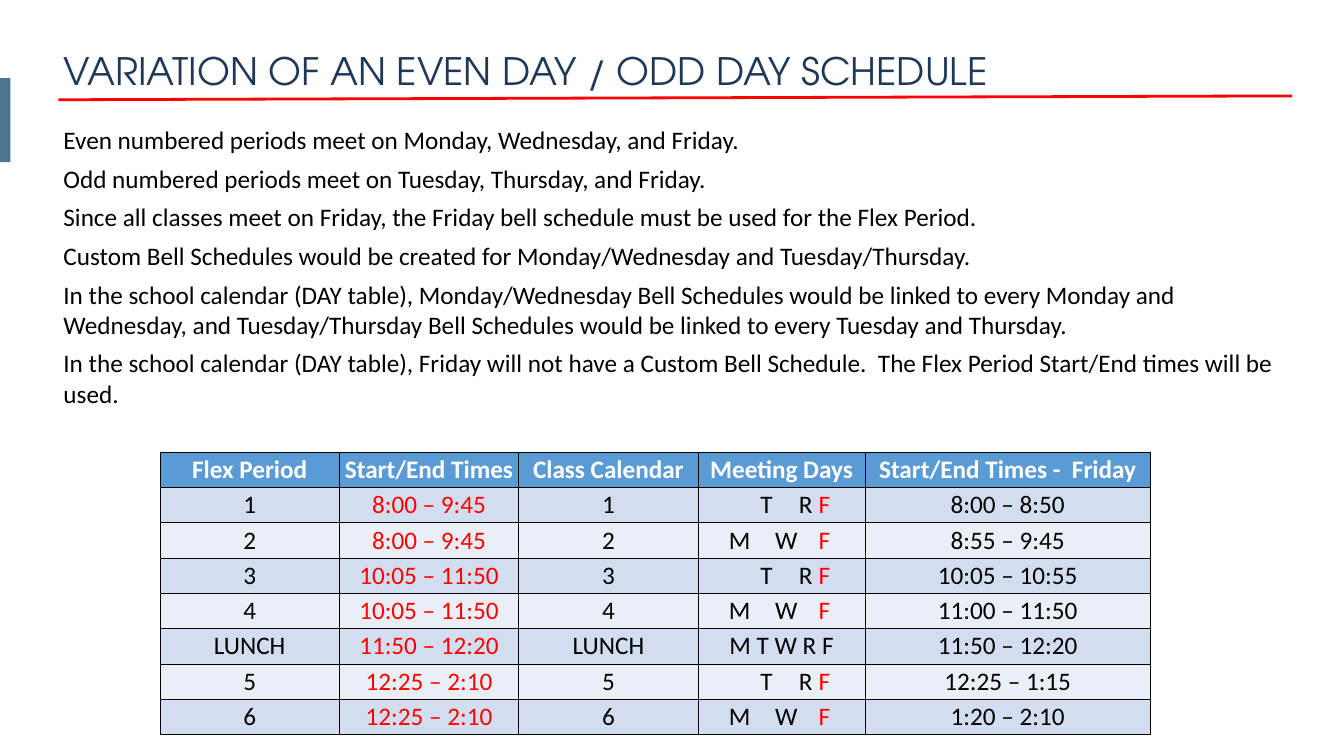
from lxml import etree
from pptx import Presentation
from pptx.dml.color import RGBColor
from pptx.enum.shapes import MSO_CONNECTOR, MSO_SHAPE
from pptx.enum.text import MSO_ANCHOR, PP_ALIGN
from pptx.oxml.ns import qn
from pptx.util import Pt

STRAIGHT = MSO_CONNECTOR.STRAIGHT
RECTANGLE = MSO_SHAPE.RECTANGLE
MIDDLE = MSO_ANCHOR.MIDDLE
LEFT, CENTER = PP_ALIGN.LEFT, PP_ALIGN.CENTER

TITLE = "VARIATION OF AN EVEN DAY / ODD DAY SCHEDULE"
RULES = [
    "Even numbered periods meet on Monday, Wednesday, and Friday.",
    "Odd numbered periods meet on Tuesday, Thursday, and Friday.",
    "Since all classes meet on Friday, the Friday bell schedule must be used for the Flex Period.",
    "Custom Bell Schedules would be created for Monday/Wednesday and Tuesday/Thursday.",
    "In the school calendar (DAY table), Monday/Wednesday Bell Schedules would be linked to every "
    "Monday and Wednesday, and Tuesday/Thursday Bell Schedules would be linked to every Tuesday "
    "and Thursday.",
    "In the school calendar (DAY table), Friday will not have a Custom Bell Schedule.  "
    "The Flex Period Start/End times will be used.",
]
HEADINGS = ["Flex Period", "Start/End Times", "Class Calendar", "Meeting Days",
            "Start/End Times -  Friday"]
PERIODS = [
    ("1", "8:00 – 9:45", "TRF", "8:00 – 8:50"),
    ("2", "8:00 – 9:45", "MWF", "8:55 – 9:45"),
    ("3", "10:05 – 11:50", "TRF", "10:05 – 10:55"),
    ("4", "10:05 – 11:50", "MWF", "11:00 – 11:50"),
    ("LUNCH", "11:50 – 12:20", "MTWRF", "11:50 – 12:20"),
    ("5", "12:25 – 2:10", "TRF", "12:25 – 1:15"),
    ("6", "12:25 – 2:10", "MWF", "1:20 – 2:10"),
]
EVERY_DAY = "MTWRF"

THEME = {
    "title_font": "TeX Gyre Adventor", "body_font": "Calibri",
    "title_size": 54, "body_size": 36,
    "navy": "203858", "accent": "507392", "red": "FF0000", "black": "000000",
    "white": "FFFFFF", "header": "5B9BD5", "bands": ("D2DEEF", "EAEFF7"),
}

SLIDE_SIZE = (1920, 1080)
MARGIN_LEFT = 83.5
TABLE_LEFT, TABLE_TOP = 228.5, 646
COLUMN_WIDTHS = [256.3, 256.3, 256.3, 238.3, 408]
ROW_HEIGHT = 50.4
CELL_INSET = 3
DAY_STOPS = {"M": 41, "T": 86, "W": 107, "R": 141, "F": 169}


def color(name):
    return RGBColor.from_string(THEME.get(name, name))


def style(font, face, size, ink, bold=False):
    font.name, font.size, font.bold = THEME[face], Pt(THEME[size]), bold
    font.color.rgb = color(ink)


def add_text(slide, box, lines, face, size, ink):
    frame = slide.shapes.add_textbox(*map(Pt, box)).text_frame
    frame.word_wrap = True
    for index, line in enumerate(lines):
        paragraph = frame.paragraphs[0] if index == 0 else frame.add_paragraph()
        paragraph.text = line
        paragraph.space_after = Pt(12)
        style(paragraph.font, face, size, ink)


def add_borders(cell):
    properties = cell._tc.get_or_add_tcPr()
    for position, side in enumerate(("lnL", "lnR", "lnT", "lnB")):
        border = etree.Element(qn(f"a:{side}"), w=str(Pt(1)))
        fill = etree.SubElement(border, qn("a:solidFill"))
        etree.SubElement(fill, qn("a:srgbClr"), val=THEME["black"])
        properties.insert(position, border)


def fill_cell(cell, text, fill, ink="black", bold=False):
    cell.fill.solid()
    cell.fill.fore_color.rgb = color(fill)
    cell.margin_left = cell.margin_right = Pt(CELL_INSET)
    cell.margin_top = cell.margin_bottom = 0
    cell.vertical_anchor = MIDDLE
    add_borders(cell)
    paragraph = cell.text_frame.paragraphs[0]
    paragraph.text = text
    paragraph.alignment = CENTER
    style(paragraph.font, "body_font", "body_size", ink, bold)
    return paragraph


def fill_days(cell, days, fill):
    if days == EVERY_DAY:
        fill_cell(cell, " ".join(days), fill)
        return
    paragraph = fill_cell(cell, "", fill)
    paragraph.alignment = LEFT
    stops = etree.Element(qn("a:tabLst"))
    paragraph._p.get_or_add_pPr().insert(0, stops)
    for day in days:
        etree.SubElement(stops, qn("a:tab"), pos=str(Pt(DAY_STOPS[day])), algn="l")
        run = paragraph.add_run()
        run.text = f"\t{day}"
        style(run.font, "body_font", "body_size", "red" if day == "F" else "black")


def add_schedule(slide):
    row_count = len(PERIODS) + 1
    table = slide.shapes.add_table(
        row_count, len(HEADINGS), Pt(TABLE_LEFT), Pt(TABLE_TOP),
        Pt(sum(COLUMN_WIDTHS)), Pt(ROW_HEIGHT * row_count)).table
    for column, width in zip(table.columns, COLUMN_WIDTHS):
        column.width = Pt(width)
    for row in table.rows:
        row.height = Pt(ROW_HEIGHT)
    for index, heading in enumerate(HEADINGS):
        fill_cell(table.cell(0, index), heading, "header", "white", True)
    for row, (period, times, days, friday) in enumerate(PERIODS, 1):
        band = THEME["bands"][(row - 1) % 2]
        fill_cell(table.cell(row, 0), period, band)
        fill_cell(table.cell(row, 1), times, band, "red")
        fill_cell(table.cell(row, 2), period, band)
        fill_days(table.cell(row, 3), days, band)
        fill_cell(table.cell(row, 4), friday, band)


def main():
    presentation = Presentation()
    presentation.slide_width, presentation.slide_height = map(Pt, SLIDE_SIZE)
    slide = presentation.slides.add_slide(presentation.slide_layouts[6])

    underline = slide.shapes.add_connector(
        STRAIGHT, Pt(MARGIN_LEFT), Pt(142.5), Pt(1846), Pt(137))
    underline.line.color.rgb = color("red")
    underline.line.width = Pt(4)
    etree.SubElement(underline._element.spPr, qn("a:effectLst"))

    add_text(slide, (MARGIN_LEFT, 174, 1746, 417), RULES, "body_font", "body_size", "black")

    side_bar = slide.shapes.add_shape(RECTANGLE, 0, Pt(111.5), Pt(15), Pt(120))
    side_bar.shadow.inherit = False
    side_bar.fill.solid()
    side_bar.fill.fore_color.rgb = color("accent")
    side_bar.line.fill.background()

    add_text(slide, (MARGIN_LEFT, 65, 1446, 73), [TITLE], "title_font", "title_size", "navy")
    add_schedule(slide)
    presentation.save("out.pptx")


if __name__ == "__main__":
    main()
